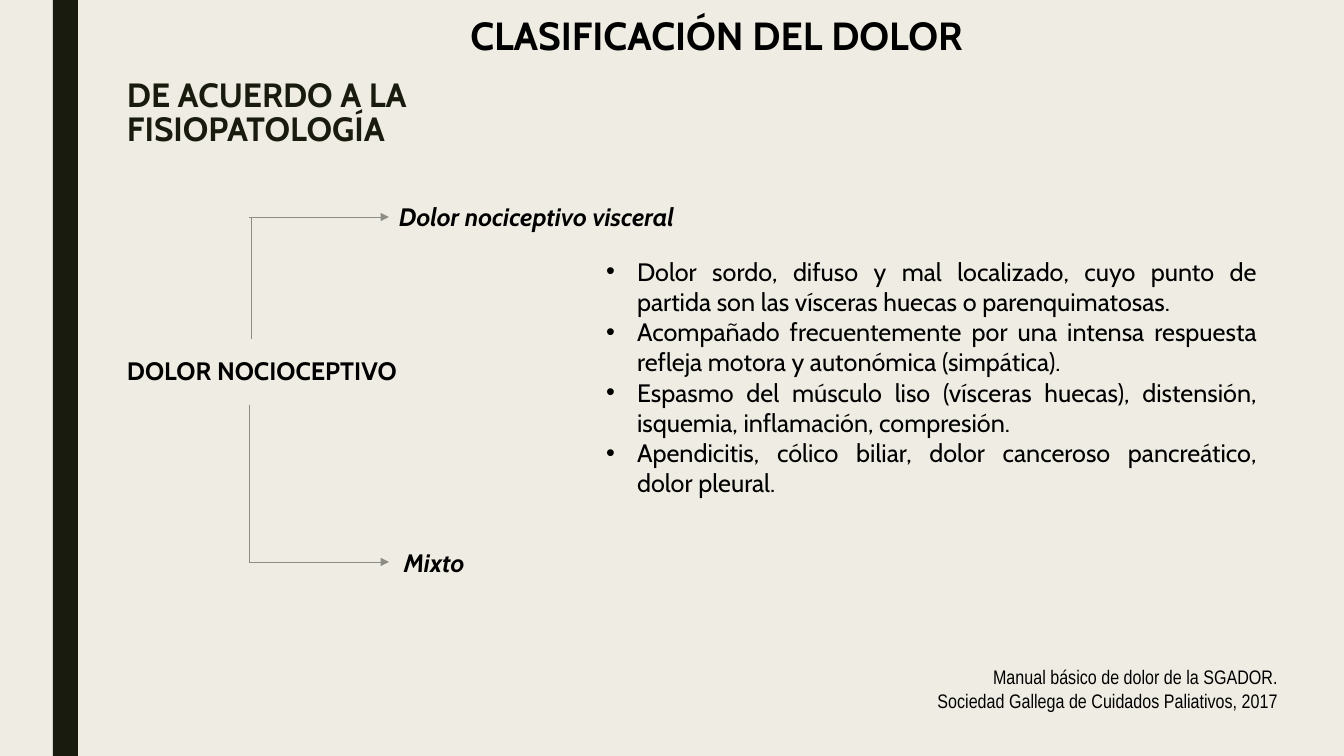
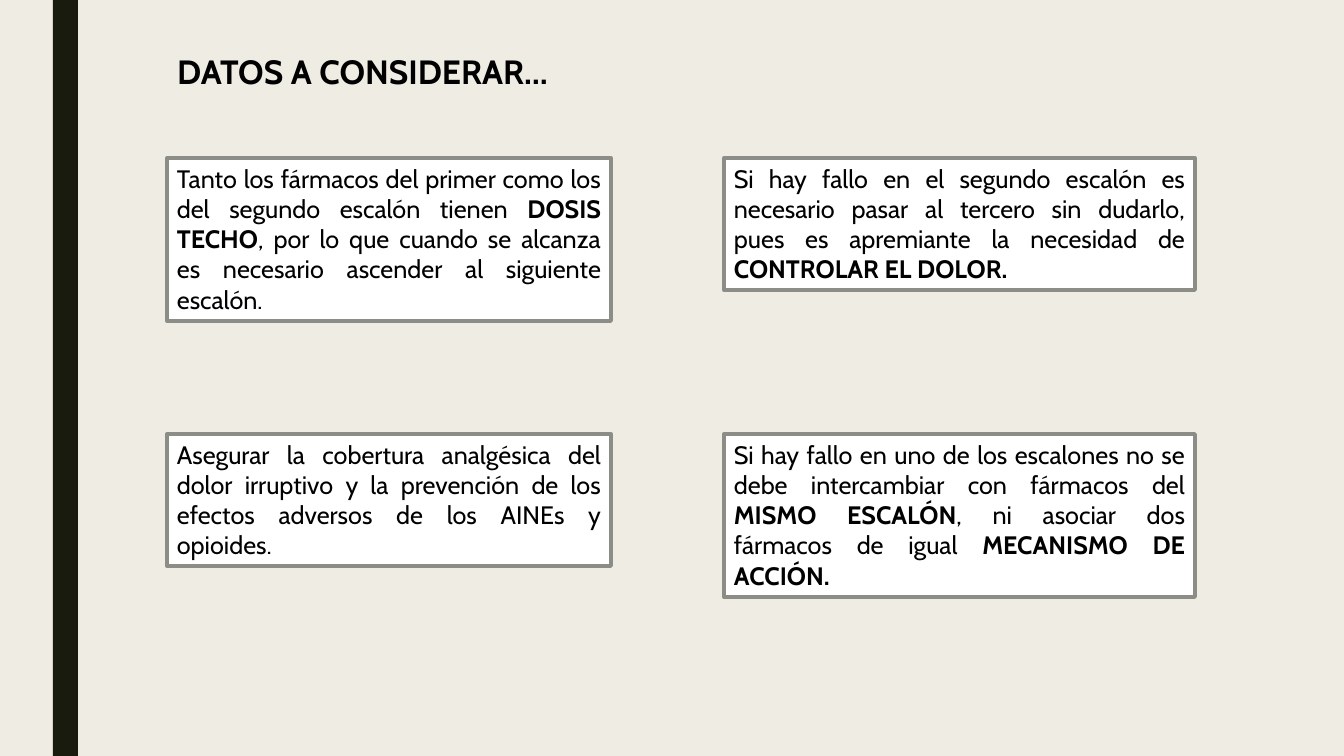
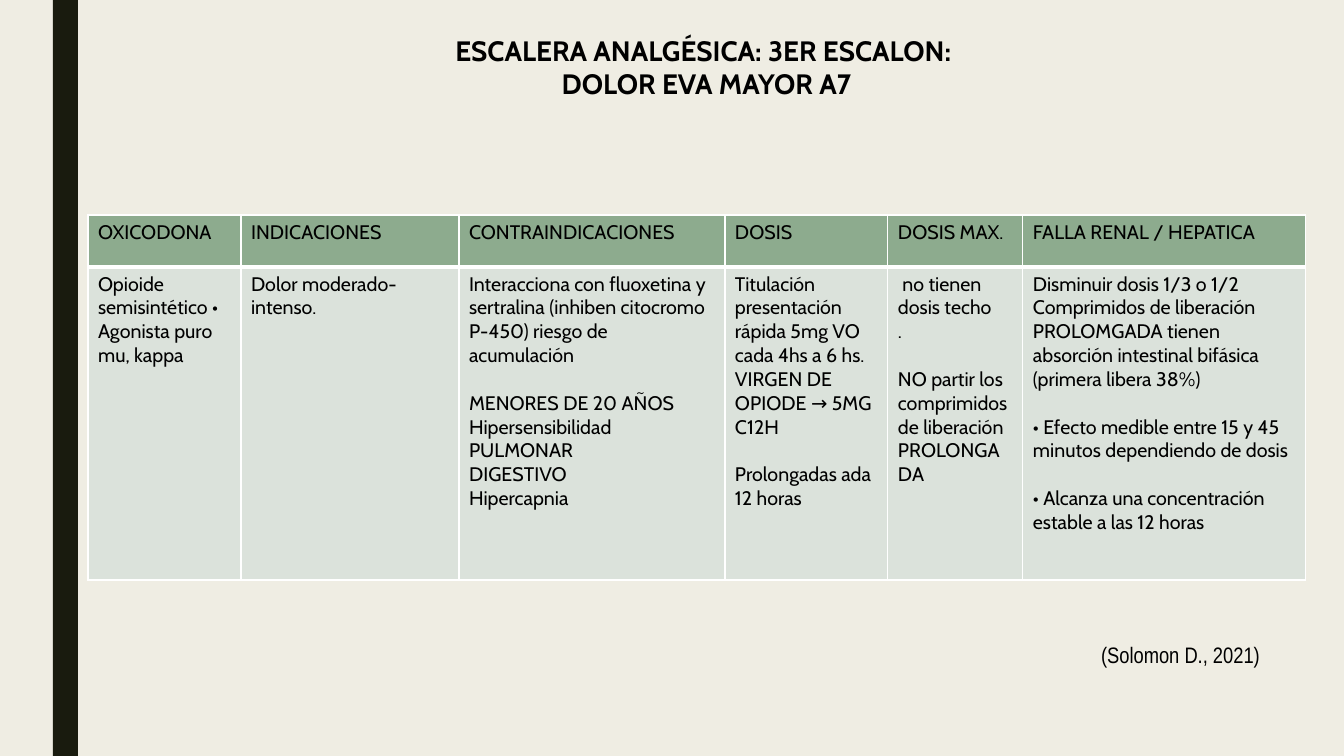
from lxml.etree import SubElement
from pptx import Presentation
from pptx.dml.color import RGBColor
from pptx.enum.dml import MSO_LINE
from pptx.enum.shapes import MSO_CONNECTOR, MSO_SHAPE
from pptx.enum.text import MSO_ANCHOR, MSO_AUTO_SIZE, PP_ALIGN
from pptx.oxml.ns import qn
from pptx.util import Pt

CREAM = RGBColor(0xEF, 0xED, 0xE3)
DARK = RGBColor(0x19, 0x1B, 0x0E)
BLACK = RGBColor(0, 0, 0)
WHITE = RGBColor(0xFF, 0xFF, 0xFF)
GRAY = RGBColor(0x8C, 0x8D, 0x86)
GREEN = RGBColor(0x8D, 0xAB, 0x8E)
PALE_GREEN = RGBColor(0xDB, 0xE2, 0xDB)
MAIN_FONT = "Cabin"
SOURCE_FONT = "Arial Narrow"
PX_PER_INCH = 100.8
SLIDE_WIDTH, SLIDE_HEIGHT = 1344, 756
CONTENT_LAYOUT, TITLE_LAYOUT = 1, 5

PAIN_TITLE = [" CLASIFICACIÓN DEL DOLOR"]
PAIN_SUBTITLE = ["DE ACUERDO A LA FISIOPATOLOGÍA"]
PAIN_ROOT = ["DOLOR NOCIOCEPTIVO"]
PAIN_BRANCHES = [
    ("Dolor nociceptivo visceral", (389, 196, 671, 40)),
    ("Mixto", (394, 542, 671, 40)),
]
PAIN_FEATURES = [
    "Dolor sordo, difuso y mal localizado, cuyo punto de partida son las vísceras huecas o parenquimatosas. ",
    "Acompañado frecuentemente por una intensa respuesta refleja motora y autonómica (simpática).",
    "Espasmo del músculo liso (vísceras huecas), distensión, isquemia, inflamación, compresión.",
    "Apendicitis, cólico biliar, dolor canceroso pancreático, dolor pleural.",
]
BULLET_INDENT = 31
STEMS = [(251, 217, 251, 339), (249, 405, 249, 562)]
ARROWS = [(249, y, 389, y) for y in (217, 562)]
PAIN_SOURCE = [
    "Manual básico de dolor de la SGADOR.",
    "Sociedad Gallega de Cuidados Paliativos, 2017",
]

FACTS_TITLE = ["DATOS A CONSIDERAR…"]
FACT_COLUMNS = [(167, 444), (724, 471)]
FACT_ROWS = [158, 434]
FACTS = [
    [
        (163, ("Tanto los fármacos del primer como los del segundo escalón tienen ",
               "DOSIS TECHO",
               ", por lo que cuando se alcanza es necesario ascender al siguiente escalón.")),
        (132, ("Si hay fallo en el segundo escalón es necesario pasar al tercero sin dudarlo, "
               "pues es apremiante la necesidad de ",
               "CONTROLAR EL DOLOR.")),
    ],
    [
        (132, ("Asegurar la cobertura analgésica del dolor irruptivo y la prevención de los "
               "efectos adversos de los AINEs y opioides.",)),
        (163, ("Si hay fallo en uno de los escalones no se debe intercambiar con fármacos del ",
               "MISMO ESCALÓN",
               ", ni asociar dos fármacos de igual ",
               "MECANISMO DE ACCIÓN.")),
    ],
]

LADDER_TITLE = ["ESCALERA ANALGÉSICA: 3ER ESCALON: ", "DOLOR EVA MAYOR A7"]
LADDER_SOURCE = ["(Solomon D., 2021) "]
DRUG_COLUMNS = [
    (153, "OXICODONA", [["Opioide semisintético • Agonista puro mu, kappa"]]),
    (218, "INDICACIONES", [["Dolor moderado-intenso."]]),
    (266, "CONTRAINDICACIONES", [
        ["Interacciona con fluoxetina y sertralina (inhiben citocromo P-450) riesgo de acumulación"],
        ["MENORES DE 20 AÑOS", "Hipersensibilidad", "PULMONAR", "DIGESTIVO", "Hipercapnia"],
    ]),
    (163, "DOSIS", [
        ["Titulación presentación rápida 5mg VO cada 4hs a 6 hs.", "VIRGEN DE OPIODE → 5MG C12H"],
        ["Prolongadas ada 12 horas"],
    ]),
    (135, "DOSIS MAX.", [
        [" no tienen dosis techo", "."],
        ["NO partir los comprimidos de liberación PROLONGADA"],
    ]),
    (283, "FALLA RENAL / HEPATICA", [
        ["Disminuir dosis 1/3 o 1/2",
         "Comprimidos de liberación PROLOMGADA tienen absorción intestinal bifásica (primera libera 38%)"],
        ["• Efecto medible entre 15 y 45 minutos dependiendo de dosis"],
        ["• Alcanza una concentración estable a las 12 horas"],
    ]),
]
ROW_HEIGHTS = [52, 313]
BLOCK_GAP = 17


def px(length):
    return round(length * 914400 / PX_PER_INCH)


def place(shape, area):
    shape.left, shape.top, shape.width, shape.height = map(px, area)


def write(frame, paragraphs, size, align=PP_ALIGN.LEFT, bold=False, italic=False,
          font=MAIN_FONT, color=BLACK, anchor=MSO_ANCHOR.TOP):
    frame.word_wrap = True
    frame.auto_size = MSO_AUTO_SIZE.NONE
    frame.vertical_anchor = anchor
    write_paragraphs(frame, paragraphs, size, align, bold, italic, font, color)


def write_paragraphs(frame, paragraphs, size, align=PP_ALIGN.LEFT, bold=False,
                     italic=False, font=MAIN_FONT, color=BLACK):
    for number, content in enumerate(paragraphs):
        para = frame.add_paragraph() if number else frame.paragraphs[0]
        para.alignment = align
        para.space_before = Pt(0)
        pieces = (content,) if isinstance(content, str) else content
        for index, text in enumerate(pieces):
            span = para.add_run()
            span.text = text
            span.font.name = font
            span.font.size = Pt(size)
            span.font.bold = bold or index % 2 == 1
            span.font.italic = italic
            span.font.color.rgb = color


def add_text(page, area, paragraphs, size, **style):
    box = page.shapes.add_textbox(*map(px, area))
    write(box.text_frame, paragraphs, size, **style)
    return box


def add_source(page, area, paragraphs, size):
    add_text(page, area, paragraphs, size, align=PP_ALIGN.RIGHT, font=SOURCE_FONT)


def add_page(deck, layout, title, area, size, align):
    page = deck.slides.add_slide(deck.slide_layouts[layout])
    place(page.shapes.title, area)
    write(page.shapes.title.text_frame, title, size, align=align, bold=True)
    return page


def add_rectangle(page, area, color):
    box = page.shapes.add_shape(MSO_SHAPE.RECTANGLE, *map(px, area))
    box.shadow.inherit = False
    box.fill.solid()
    box.fill.fore_color.rgb = color
    box.line.fill.background()
    return box


def add_line(page, ends, arrow=False):
    line = page.shapes.add_connector(MSO_CONNECTOR.STRAIGHT, *map(px, ends))
    line.line.color.rgb = GRAY
    line.line.width = Pt(0.5)
    line.line.dash_style = MSO_LINE.SOLID
    if arrow:
        SubElement(line.line._get_or_add_ln(), qn("a:tailEnd"), type="triangle")
    SubElement(line._element.spPr, qn("a:effectLst"))


def style_master(deck, page):
    master = deck.slide_master
    master.background.fill.solid()
    master.background.fill.fore_color.rgb = CREAM
    band = add_rectangle(page, (53, 0, 25, SLIDE_HEIGHT), DARK)
    master.shapes.element.insert(2, band.element)


def style_cell(cell, color, bottom_width):
    properties = cell._tc.get_or_add_tcPr()
    for side, width in (("L", 1), ("R", 1), ("T", 1), ("B", bottom_width)):
        border = SubElement(properties, qn("a:ln" + side), w=str(Pt(width)))
        fill = SubElement(border, qn("a:solidFill"))
        SubElement(fill, qn("a:srgbClr"), val=str(WHITE))
    cell.fill.solid()
    cell.fill.fore_color.rgb = color


def build_pain(deck):
    page = add_page(deck, CONTENT_LAYOUT, PAIN_TITLE, (270, 6, 884, 57), 28, PP_ALIGN.CENTER)
    style_master(deck, page)
    subtitle = add_text(page, (117, 96, 555, 57), PAIN_SUBTITLE, 24, bold=True,
                        color=DARK, anchor=MSO_ANCHOR.BOTTOM)
    subtitle.text_frame.paragraphs[0].line_spacing = 0.84
    add_text(page, (117, 350, 671, 40), PAIN_ROOT, 18, bold=True)
    for text, area in PAIN_BRANCHES:
        add_text(page, area, [text], 18, bold=True, italic=True)
    features = page.placeholders[1]
    place(features, (596, 251, 671, 254))
    write(features.text_frame, PAIN_FEATURES, 18, align=PP_ALIGN.JUSTIFY)
    for para in features.text_frame.paragraphs:
        properties = para._p.get_or_add_pPr()
        properties.set("marL", str(px(BULLET_INDENT)))
        properties.set("indent", str(-px(BULLET_INDENT)))
    for ends in STEMS:
        add_line(page, ends)
    for ends in ARROWS:
        add_line(page, ends, arrow=True)
    add_source(page, (617, 660, 671, 57), PAIN_SOURCE, 14)


def build_facts(deck):
    page = add_page(deck, TITLE_LAYOUT, FACTS_TITLE, (167, 46, 939, 50), 24, PP_ALIGN.LEFT)
    for top, row in zip(FACT_ROWS, FACTS):
        for (left, width), (height, pieces) in zip(FACT_COLUMNS, row):
            box = add_rectangle(page, (left, top, width, height), WHITE)
            box.line.color.rgb = GRAY
            box.line.width = Pt(2.75)
            write(box.text_frame, [pieces], 18, align=PP_ALIGN.JUSTIFY)


def build_ladder(deck):
    page = add_page(deck, TITLE_LAYOUT, LADDER_TITLE, (151, 28, 1111, 112), 20, PP_ALIGN.CENTER)
    total_width = sum(width for width, _, _ in DRUG_COLUMNS)
    area = (88, 215, total_width, sum(ROW_HEIGHTS))
    table = page.shapes.add_table(2, len(DRUG_COLUMNS), *map(px, area)).table
    table.first_row = False
    table.horz_banding = False
    for row, height in zip(table.rows, ROW_HEIGHTS):
        row.height = px(height)
    for column, (width, heading, blocks) in enumerate(DRUG_COLUMNS):
        table.columns[column].width = px(width)
        head, body = table.cell(0, column), table.cell(1, column)
        style_cell(head, GREEN, 3)
        style_cell(body, PALE_GREEN, 1)
        write_paragraphs(head.text_frame, [heading], 14)
        write_paragraphs(body.text_frame, [line for block in blocks for line in block], 14)
        start = 0
        for block in blocks[:-1]:
            start += len(block)
            body.text_frame.paragraphs[start].space_before = Pt(BLOCK_GAP)
    add_source(page, (939, 636, 336, 37), LADDER_SOURCE, 16)


def main():
    deck = Presentation()
    deck.slide_width, deck.slide_height = px(SLIDE_WIDTH), px(SLIDE_HEIGHT)
    build_pain(deck)
    build_facts(deck)
    build_ladder(deck)
    deck.save("out.pptx")


if __name__ == "__main__":
    main()
